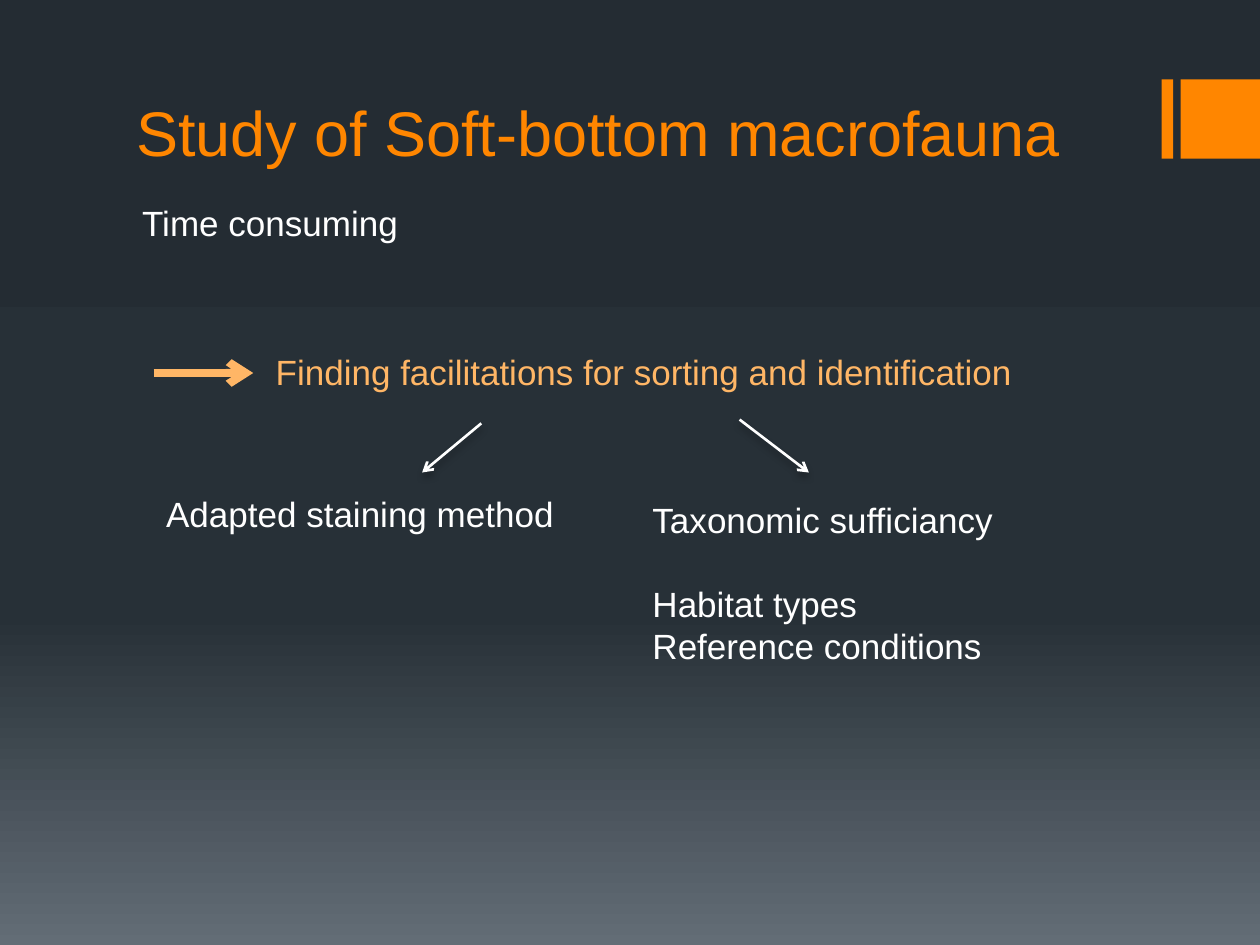
from copy import deepcopy
from dataclasses import dataclass

from lxml import etree
from pptx import Presentation
from pptx.dml.color import RGBColor
from pptx.enum.shapes import MSO_CONNECTOR, MSO_SHAPE
from pptx.enum.text import MSO_ANCHOR, MSO_AUTO_SIZE, PP_ALIGN
from pptx.oxml.ns import qn
from pptx.util import Inches, Pt

STRAIGHT, RECTANGLE = MSO_CONNECTOR.STRAIGHT, MSO_SHAPE.RECTANGLE
BOTTOM, NO_FIT, LEFT = MSO_ANCHOR.BOTTOM, MSO_AUTO_SIZE.NONE, PP_ALIGN.LEFT
FONT = "Arial"
TITLE_ONLY = 5
ORANGE = RGBColor(0xFF, 0x86, 0x00)
PEACH = RGBColor(0xFF, 0xB6, 0x66)
WHITE = RGBColor(0xFF, 0xFF, 0xFF)
BACKGROUND = [
    (0, RGBColor(0x24, 0x2C, 0x33)),
    (0.65, RGBColor(0x27, 0x30, 0x37)),
    (1, RGBColor(0x63, 0x6D, 0x76)),
]
WIDTH, HEIGHT = Inches(10), Inches(7.5)
LINE_PITCH = Pt(24)


def px(share: float) -> int:
    """Percent of the slide width."""
    return round(WIDTH * share / 100)


def py(share: float) -> int:
    """Percent of the slide height."""
    return round(HEIGHT * share / 100)


@dataclass
class Label:
    x: float
    y: float
    w: float
    h: float
    groups: list[list[str]]  # groups are separated by one line of space
    color: RGBColor = WHITE


@dataclass
class Arrow:
    x1: float
    y1: float
    x2: float
    y2: float
    color: RGBColor = WHITE
    width: float = 1.5
    shadow: bool = True


LABELS = [
    Label(10.3, 20.67, 40, 5.87, [["Time consuming"]]),
    Label(20.9, 36.4, 66, 5.87,
          [["Finding facilitations for sorting and identification"]], PEACH),
    Label(12.2, 51.47, 34.6, 5.87, [["Adapted staining method"]]),
    Label(50.8, 52.13, 31.5, 19.33,
          [["Taxonomic sufficiancy"], ["Habitat types", "Reference conditions"]]),
]
ARROWS = [
    Arrow(12.2, 39.47, 20.1, 39.47, PEACH, 4.5, False),
    Arrow(38.2, 44.8, 33.5, 50),
    Arrow(58.7, 44.4, 64.2, 50),
]
ACCENT_BARS = [(92.2, 0.9), (93.7, 6.3)]  # left, width


def paint_background(slide) -> None:
    fill = slide.background.fill
    fill.gradient()
    fill.gradient_angle = 270
    stops = fill.gradient_stops
    first = slide.background._cSld.find(".//" + qn("a:gs"))
    first.addnext(deepcopy(first))
    stops = fill.gradient_stops
    for stop, (position, color) in zip(stops, BACKGROUND):
        stop.position = position
        stop.color.rgb = color


def style(p, size: float, color: RGBColor) -> None:
    p.alignment = LEFT
    p.font.name, p.font.size = FONT, Pt(size)
    p.font.color.rgb = color


def add_bar(slide, left: float, width: float) -> None:
    sp = slide.shapes.add_shape(RECTANGLE, px(left), py(8.4), px(width), py(8.4))
    sp.shadow.inherit = False
    sp.fill.solid()
    sp.fill.fore_color.rgb = ORANGE
    sp.line.fill.background()


def set_title(slide, text: str) -> None:
    sp = slide.shapes.title
    sp.left, sp.top, sp.width, sp.height = px(9.8), py(1.73), px(80), py(16.8)
    tf = sp.text_frame
    tf.text = text
    tf.vertical_anchor, tf.auto_size = BOTTOM, NO_FIT
    style(tf.paragraphs[0], 36, ORANGE)


def add_label(slide, label: Label) -> None:
    sp = slide.shapes.add_textbox(px(label.x), py(label.y), px(label.w), py(label.h))
    tf = sp.text_frame
    tf.word_wrap = True
    tf.text = "\n".join(line for group in label.groups for line in group)
    paragraphs = iter(tf.paragraphs)
    for g, group in enumerate(label.groups):
        for i in range(len(group)):
            p = next(paragraphs)
            style(p, 20, label.color)
            p.line_spacing = LINE_PITCH
            if g and i == 0:
                p.space_before = LINE_PITCH


def add_arrow(slide, arrow: Arrow) -> None:
    cx = slide.shapes.add_connector(
        STRAIGHT, px(arrow.x1), py(arrow.y1), px(arrow.x2), py(arrow.y2))
    cx.line.color.rgb = arrow.color
    cx.line.width = Pt(arrow.width)
    etree.SubElement(cx.line._get_or_add_ln(), qn("a:tailEnd"), type="arrow")
    effects = etree.SubElement(cx._element.spPr, qn("a:effectLst"))
    if arrow.shadow:
        shadow = etree.SubElement(
            effects, qn("a:outerShdw"), blurRad=str(Pt(4)), dist=str(Pt(3)),
            dir="5400000", rotWithShape="0")
        color = etree.SubElement(shadow, qn("a:srgbClr"), val="000000")
        etree.SubElement(color, qn("a:alpha"), val="28000")


def main() -> None:
    prs = Presentation()
    prs.slide_width, prs.slide_height = WIDTH, HEIGHT
    s = prs.slides.add_slide(prs.slide_layouts[TITLE_ONLY])
    paint_background(s)

    # Accent bars and title
    for left, width in ACCENT_BARS:
        add_bar(s, left, width)
    set_title(s, "Study of Soft-bottom macrofauna")

    # Statements and the arrows between them
    for label in LABELS:
        add_label(s, label)
    for arrow in ARROWS:
        add_arrow(s, arrow)

    prs.save("out.pptx")


if __name__ == "__main__":
    main()
